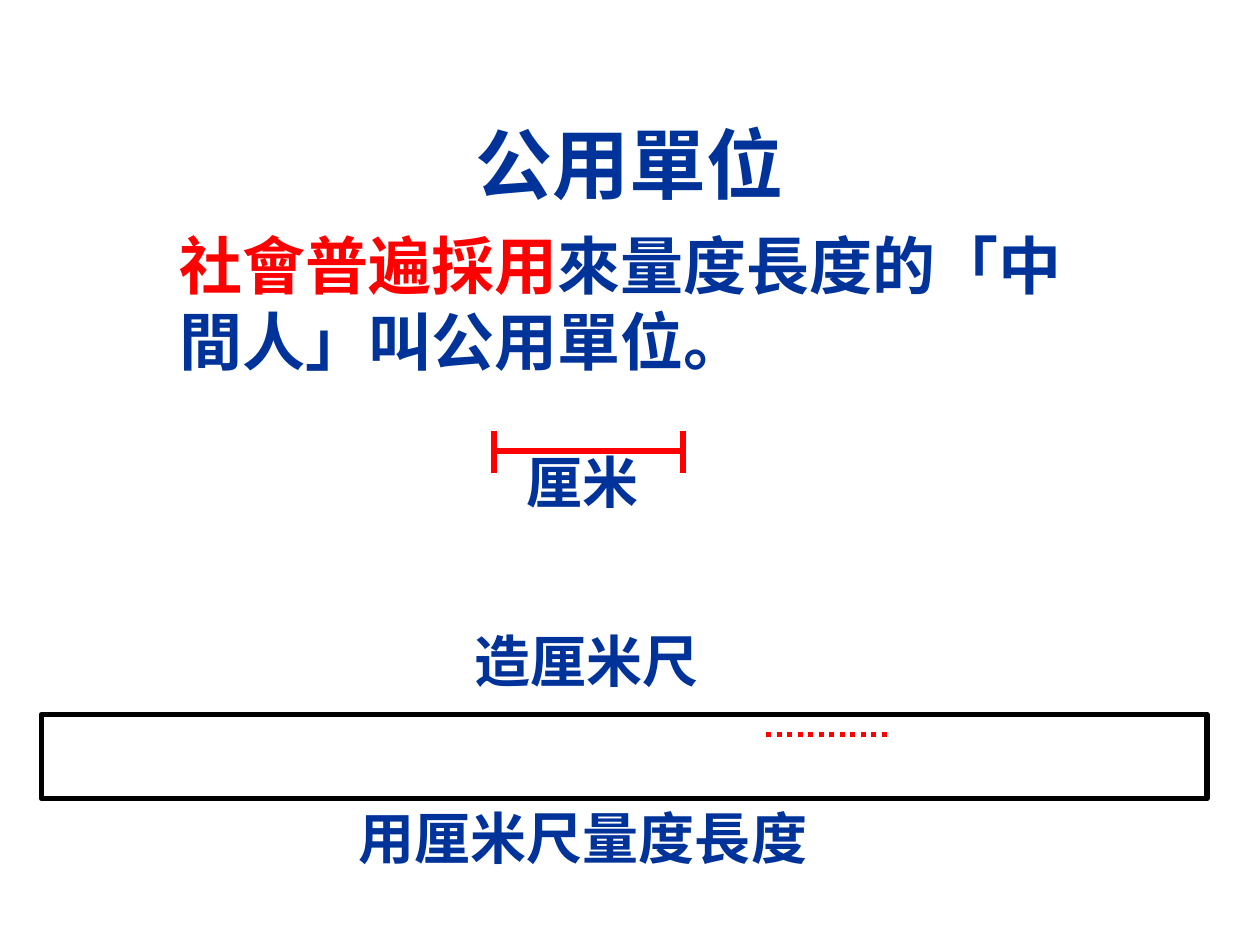
from pptx import Presentation
from pptx.dml.color import RGBColor
from pptx.enum.dml import MSO_LINE_DASH_STYLE as Dash
from pptx.enum.shapes import MSO_CONNECTOR as Connector, MSO_SHAPE as Shape
from pptx.enum.text import MSO_ANCHOR as Anchor, MSO_AUTO_SIZE as AutoSize, PP_ALIGN as Align
from pptx.oxml.ns import qn
from pptx.util import Inches, Pt
from lxml.etree import SubElement

BLUE = RGBColor(0x00, 0x33, 0x99)
RED = RGBColor(0xFF, 0x00, 0x00)
BLACK = RGBColor(0x00, 0x00, 0x00)
WHITE = RGBColor(0xFF, 0xFF, 0xFF)
FONT = "Arial"
STROKE = Pt(3)


def style_run(run, size, color):
    run.font.name = FONT
    run.font.size = Pt(size)
    run.font.bold = True
    run.font.color.rgb = color


def add_title(slide, text):
    title = slide.shapes.title
    title.left, title.top = Inches(0.33), Inches(0.67)
    title.width, title.height = Inches(9.34), Inches(1.25)
    frame = title.text_frame
    frame.text = text
    frame.vertical_anchor = Anchor.MIDDLE
    frame.paragraphs[0].alignment = Align.CENTER
    style_run(frame.paragraphs[0].runs[0], 44, BLUE)


def add_text(slide, left, top, width, height, parts, size=32):
    """Add a one-paragraph text box from (text, colour) parts."""
    box = slide.shapes.add_textbox(Inches(left), Inches(top), Inches(width), Inches(height))
    frame = box.text_frame
    frame.word_wrap = True
    frame.auto_size = AutoSize.SHAPE_TO_FIT_TEXT
    for text, color in parts:
        run = frame.paragraphs[0].add_run()
        run.text = text
        style_run(run, size, color)


def add_line(slide, x1, y1, x2, y2, dash=None):
    line = slide.shapes.add_connector(
        Connector.STRAIGHT, Inches(x1), Inches(y1), Inches(x2), Inches(y2))
    line.line.color.rgb = RED
    line.line.width = STROKE
    if dash:
        line.line.dash_style = dash
    SubElement(line._element.spPr, qn("a:effectLst"))


def add_unit_mark(slide, left, right, y, top, bottom):
    """Add a length mark: a bar with a tick at each end."""
    add_line(slide, left, y, right, y)
    for x in (left, right):
        add_line(slide, x, top, x, bottom)


def add_ruler(slide, left, top, width, height):
    ruler = slide.shapes.add_shape(
        Shape.RECTANGLE, Inches(left), Inches(top), Inches(width), Inches(height))
    ruler.shadow.inherit = False
    ruler.fill.solid()
    ruler.fill.fore_color.rgb = WHITE
    ruler.line.color.rgb = BLACK
    ruler.line.width = STROKE


def main():
    deck = Presentation()
    deck.slide_width, deck.slide_height = Inches(10), Inches(7.5)
    slide = deck.slides.add_slide(deck.slide_layouts[5])

    # Title and definition
    add_title(slide, "公用單位")
    add_text(slide, 1.33, 1.75, 7.25, 1.3,
             [("社會普遍採用", RED), ("來量度長度的「中間人」叫公用單位。", BLUE)], 36)

    # The centimetre
    add_text(slide, 4.08, 3.5, 1.25, 0.63, [("厘米", BLUE)])
    add_unit_mark(slide, 3.92, 5.42, 3.58, 3.42, 3.75)

    # Making and using the ruler
    add_text(slide, 3.67, 4.92, 2, 0.63, [("造厘米尺", BLUE)])
    add_text(slide, 2.75, 6.33, 3.92, 0.63, [("用厘米尺量度長度", BLUE)])
    add_ruler(slide, 0.33, 5.67, 9.25, 0.67)
    add_line(slide, 6.08, 5.83, 7.08, 5.83, Dash.ROUND_DOT)

    deck.save("out.pptx")


if __name__ == "__main__":
    main()
